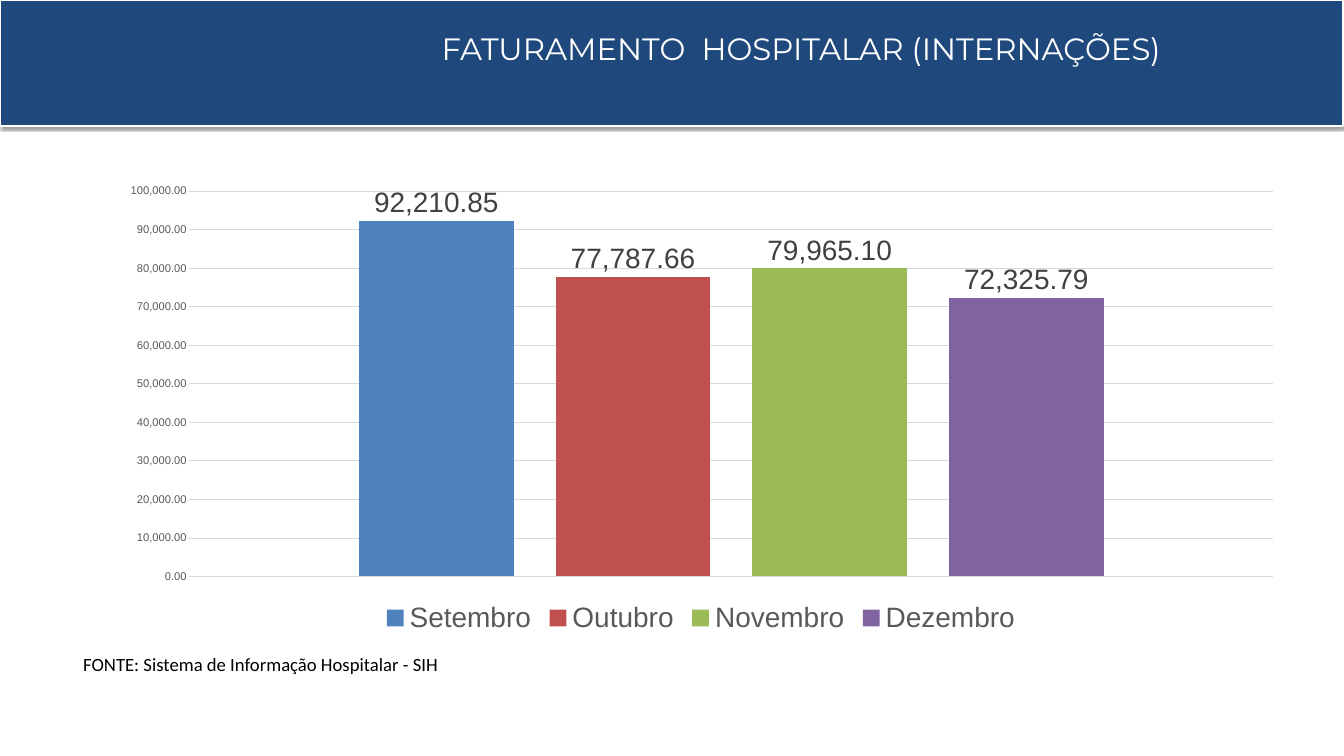
from dataclasses import dataclass

from lxml.etree import SubElement
from pptx import Presentation
from pptx.chart.data import CategoryChartData
from pptx.dml.color import RGBColor
from pptx.enum.chart import XL_CHART_TYPE as ChartType
from pptx.enum.chart import XL_LABEL_POSITION as LabelPosition
from pptx.enum.chart import XL_LEGEND_POSITION as LegendPosition
from pptx.enum.chart import XL_TICK_MARK as TickMark
from pptx.enum.shapes import MSO_SHAPE as Shape
from pptx.enum.text import PP_ALIGN as Align
from pptx.oxml import parse_xml
from pptx.oxml.ns import nsdecls, qn
from pptx.util import Pt

BILLING = {
    "Setembro": 92210.85,
    "Outubro": 77787.66,
    "Novembro": 79965.10,
    "Dezembro": 72325.79,
}


@dataclass(frozen=True)
class Theme:
    banner: str = "1F497D"
    white: str = "FFFFFF"
    black: str = "000000"
    axis_text: str = "595959"
    label_text: str = "404040"
    grid: str = "D9D9D9"
    series: tuple = ("4F81BD", "C0504D", "9BBB59", "8064A2")
    title_font: str = "Montserrat"
    body_font: str = "Calibri"
    chart_font: str = "Arial"
    title_size: int = 33
    body_size: int = 20
    axis_size: int = 12
    chart_size: int = 30
    number_format: str = "#,##0.00"


def style_font(font, name, size, color):
    font.name = name
    font.size = Pt(size)
    font.color.rgb = RGBColor.from_string(color)


def points(*lengths):
    return [Pt(length) for length in lengths]


class SlideBuilder:
    def __init__(self, page, theme):
        self.page = page
        self.theme = theme

    def banner(self, *box):
        band = self.page.shapes.add_shape(Shape.RECTANGLE, *points(*box))
        band.fill.solid()
        band.fill.fore_color.rgb = RGBColor.from_string(self.theme.banner)
        band.line.color.rgb = RGBColor.from_string(self.theme.white)
        band.line.width = Pt(3)
        band.shadow.inherit = False
        effects = band._element.spPr.find(qn("a:effectLst"))
        effects.append(parse_xml(
            f'<a:outerShdw {nsdecls("a")} blurRad="{Pt(3.1)}" dist="{Pt(1.6)}" '
            'dir="5400000" rotWithShape="0"><a:srgbClr val="000000">'
            '<a:alpha val="38000"/></a:srgbClr></a:outerShdw>'))

    def text(self, words, *box, font, size, color, align=Align.LEFT, spacing=1.0):
        frame = self.page.shapes.add_textbox(*points(*box)).text_frame
        frame.word_wrap = True
        frame.text = words
        para = frame.paragraphs[0]
        para.alignment = align
        para.line_spacing = spacing
        style_font(para.runs[0].font, font, size, color)

    def column_chart(self, values, *box, plot):
        theme = self.theme
        data = CategoryChartData(number_format=theme.number_format)
        data.categories = ["1"]
        for name, value in values.items():
            data.add_series(name, [value])
        chart = self.page.shapes.add_chart(
            ChartType.COLUMN_CLUSTERED, *points(*box), data).chart
        chart.has_title = False
        style_font(chart.font, theme.chart_font, 10, theme.black)
        self.place_plot(chart, plot)
        self.style_axes(chart)

        chart.has_legend = True
        chart.legend.position = LegendPosition.BOTTOM
        chart.legend.include_in_layout = False
        style_font(chart.legend.font, theme.chart_font, theme.chart_size, theme.axis_text)

        columns = chart.plots[0]
        columns.gap_width = 219
        columns.overlap = -27
        columns.vary_by_categories = False
        for series, color in zip(columns.series, theme.series):
            series.format.fill.solid()
            series.format.fill.fore_color.rgb = RGBColor.from_string(color)
            labels = series.data_labels
            labels.show_value = True
            labels.position = LabelPosition.OUTSIDE_END
            labels.number_format = theme.number_format
            labels.number_format_is_linked = False
            style_font(labels.font, theme.chart_font, theme.chart_size, theme.label_text)

    def style_axes(self, chart):
        theme = self.theme
        chart.category_axis.visible = False
        axis = chart.value_axis
        axis.minimum_scale, axis.maximum_scale, axis.major_unit = 0, 100000, 10000
        axis.major_tick_mark = axis.minor_tick_mark = TickMark.NONE
        axis.format.line.fill.background()
        grid = axis.major_gridlines.format.line
        grid.color.rgb = RGBColor.from_string(theme.grid)
        grid.width = Pt(0.75)
        axis.tick_labels.number_format = theme.number_format
        axis.tick_labels.number_format_is_linked = False
        style_font(axis.tick_labels.font, theme.chart_font, theme.axis_size, theme.axis_text)

    def place_plot(self, chart, plot):
        """Fix the inner plot area as fractions (x, y, w, h) of the chart."""
        area = chart._chartSpace.chart.plotArea
        layout = area.find(qn("c:layout"))
        if layout is None:
            layout = parse_xml(f'<c:layout {nsdecls("c")}/>')
            area.insert(0, layout)
        manual = SubElement(layout, qn("c:manualLayout"))
        settings = {"layoutTarget": "inner", "xMode": "edge", "yMode": "edge"}
        settings.update(zip("xywh", plot))
        for tag, value in settings.items():
            SubElement(manual, qn(f"c:{tag}")).set("val", str(value))


def main():
    deck = Presentation()
    deck.slide_width, deck.slide_height = Pt(1440), Pt(810)
    theme = Theme()
    builder = SlideBuilder(deck.slides.add_slide(deck.slide_layouts[6]), theme)

    builder.banner(0, 0, 1439, 135)
    builder.text(" FATURAMENTO  HOSPITALAR (INTERNAÇÕES) ", 390, 8, 937, 127,
                 font=theme.title_font, size=theme.title_size, color=theme.white,
                 align=Align.CENTER, spacing=1.5)
    builder.text("FONTE: Sistema de Informação Hospitalar - SIH", 82, 695.5, 819, 32,
                 font=theme.body_font, size=theme.body_size, color=theme.black)
    builder.column_chart(BILLING, 122.4, 184.3, 1257, 500.4,
                         plot=(0.064, 0.041, 0.924, 0.825))
    deck.save("out.pptx")


if __name__ == "__main__":
    main()
